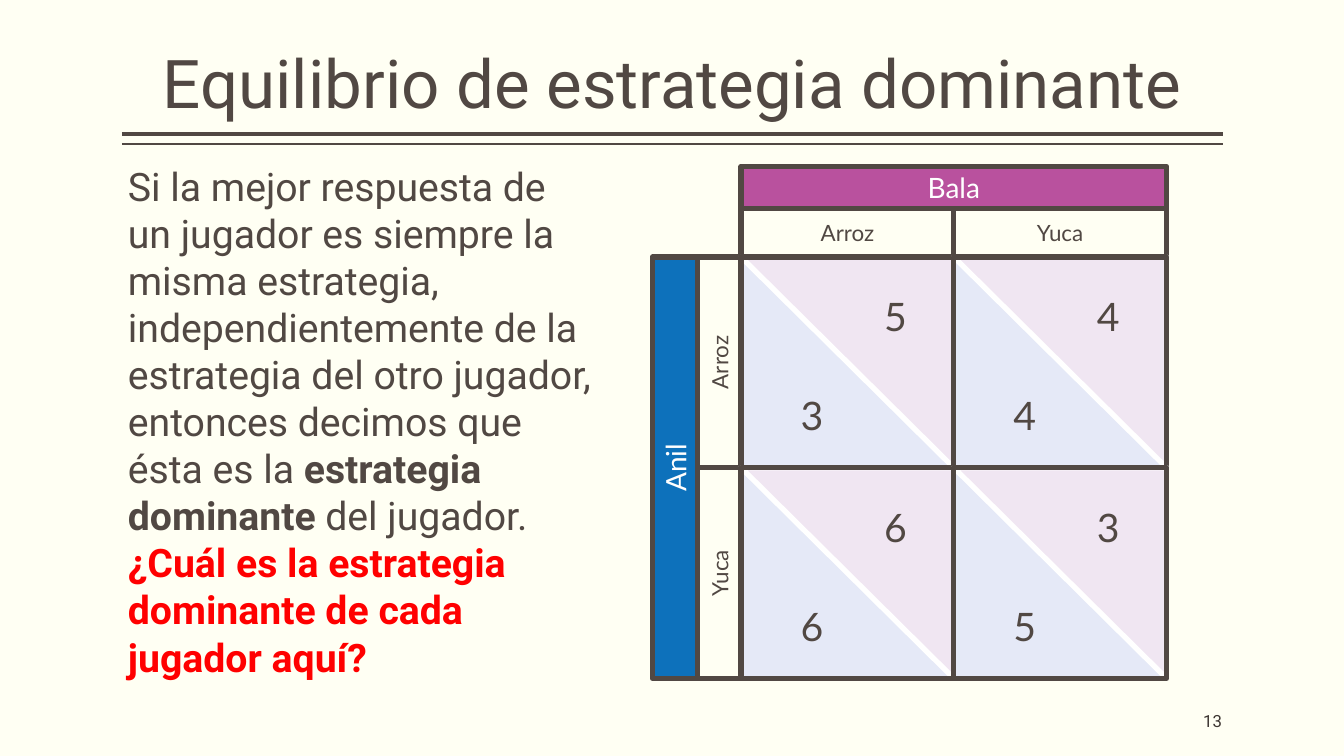
from lxml import etree
from pptx import Presentation
from pptx.dml.color import RGBColor
from pptx.enum.shapes import MSO_CONNECTOR, MSO_SHAPE
from pptx.enum.text import MSO_ANCHOR, PP_ALIGN
from pptx.oxml.ns import qn
from pptx.util import Inches, Pt

RECTANGLE = MSO_SHAPE.RECTANGLE
TRIANGLE = MSO_SHAPE.RIGHT_TRIANGLE
STRAIGHT = MSO_CONNECTOR.STRAIGHT
TOP, MIDDLE, BOTTOM = MSO_ANCHOR.TOP, MSO_ANCHOR.MIDDLE, MSO_ANCHOR.BOTTOM
LEFT, CENTER, RIGHT = PP_ALIGN.LEFT, PP_ALIGN.CENTER, PP_ALIGN.RIGHT

INK, WHITE, CREAM, RED = "514843", "FFFFFF", "FFFFF3", "FF0000"
BALA, BALA_PALE = "B9519E", "F0E6F2"
ANIL, ANIL_PALE = "0D71BB", "E5E9F7"
PAGE_INK = "3D3632"

GRID_X, GRID_Y = 7.35, 2.55
CELL_W, CELL_H = 2.11, 2.09
BORDER = 3.78
STRATEGIES = ["Arroz", "Yuca"]
PAYOFFS = [[(3, 5), (4, 4)], [(6, 6), (5, 3)]]


def color(hex_code):
    return RGBColor.from_string(hex_code)


def add_run(paragraph, text, size, font, ink, bold=False):
    run = paragraph.add_run()
    run.text = text
    run.font.size = Pt(size)
    run.font.name = font
    run.font.bold = bold
    run.font.color.rgb = color(ink)


def add_text(slide, box, runs, size, font, align=LEFT, anchor=TOP, side_inset=0.1, spacing=None):
    frame = slide.shapes.add_textbox(*map(Inches, box)).text_frame
    frame.word_wrap = True
    frame.vertical_anchor = anchor
    frame.margin_left = frame.margin_right = Inches(side_inset)
    paragraph = frame.paragraphs[0]
    paragraph.alignment = align
    if spacing:
        paragraph.line_spacing = spacing
    for text, ink, bold in runs:
        add_run(paragraph, text, size, font, ink, bold)


def add_panel(slide, kind, box, fill=None, line=None, label="", size=16, ink=INK, rotation=0):
    left, top, width, height = box
    if rotation == 270:
        left, top = left + (width - height) / 2, top + (height - width) / 2
        width, height = height, width
    panel = slide.shapes.add_shape(kind, *map(Inches, (left, top, width, height)))
    panel.shadow.inherit = False
    panel.rotation = rotation
    if fill:
        panel.fill.solid()
        panel.fill.fore_color.rgb = color(fill)
    else:
        panel.fill.background()
    if line:
        panel.line.color.rgb = color(line)
        panel.line.width = Pt(BORDER)
    else:
        panel.line.fill.background()
    if label:
        frame = panel.text_frame
        frame.vertical_anchor = MIDDLE
        frame.paragraphs[0].alignment = CENTER
        add_run(frame.paragraphs[0], label, size, "Lato", ink)


def add_rule(slide, y, weight):
    rule = slide.shapes.add_connector(STRAIGHT, Inches(1.21), Inches(y), Inches(12.13), Inches(y))
    rule.line.color.rgb = color(INK)
    rule.line.width = Pt(weight)
    etree.SubElement(rule._element.spPr, qn("a:effectLst"))


def add_payoff_cell(slide, left, top, anil_payoff, bala_payoff):
    cell = (left, top, CELL_W, CELL_H)
    add_panel(slide, TRIANGLE, (left, top + 0.02, CELL_W, 2.06), ANIL_PALE,
              label=str(anil_payoff), size=28)
    add_panel(slide, TRIANGLE, cell, BALA_PALE, WHITE, rotation=180)
    add_text(slide, (left + 1.32, top + 0.3, 0.41, 0.57),
             [(str(bala_payoff), INK, False)], 28, "Lato")
    add_panel(slide, RECTANGLE, cell, line=INK)


def add_game(slide):
    add_panel(slide, RECTANGLE, (GRID_X, 1.65, 2 * CELL_W, 0.42), BALA, INK, "Bala", 20, WHITE)
    add_panel(slide, RECTANGLE, (6.47, GRID_Y, 0.45, 2 * CELL_H), ANIL, INK, "Anil", 20, WHITE, 270)
    for index, strategy in enumerate(STRATEGIES):
        column_x = GRID_X + index * CELL_W
        row_y = GRID_Y + index * CELL_H
        add_panel(slide, RECTANGLE, (column_x, 2.07, CELL_W, 0.48), line=INK, label=strategy)
        add_panel(slide, RECTANGLE, (6.92, row_y, 0.43, CELL_H), line=INK, label=strategy,
                  rotation=270)
    for row, payoffs in enumerate(PAYOFFS):
        for column, (anil_payoff, bala_payoff) in enumerate(payoffs):
            add_payoff_cell(slide, GRID_X + column * CELL_W, GRID_Y + row * CELL_H,
                            anil_payoff, bala_payoff)


def main():
    deck = Presentation()
    deck.slide_width, deck.slide_height = Inches(13.33), Inches(7.5)
    slide = deck.slides.add_slide(deck.slide_layouts[6])
    slide.background.fill.solid()
    slide.background.fill.fore_color.rgb = color(CREAM)

    add_rule(slide, 1.33, 3)
    add_rule(slide, 1.43, 1)
    add_text(slide, (1.21, 0.07, 10.92, 1.2),
             [("Equilibrio de estrategia dominante", INK, False)],
             48, "Roboto", CENTER, BOTTOM, 0, 0.9)
    add_text(slide, (1.17, 1.56, 4.81, 5.28), [
        ("Si la mejor respuesta de un jugador es siempre la misma estrategia, "
         "independientemente de la estrategia del otro jugador, "
         "entonces decimos que ésta es la ", INK, False),
        ("estrategia dominante ", INK, True),
        ("del jugador. ", INK, False),
        ("¿Cuál es la estrategia dominante de cada jugador aquí?", RED, True),
    ], 28, "Roboto")
    add_game(slide)
    add_text(slide, (10.12, 6.95, 2, 0.4), [("13", PAGE_INK, False)],
             12, "Roboto", RIGHT, MIDDLE, 0)
    deck.save("out.pptx")


if __name__ == "__main__":
    main()
